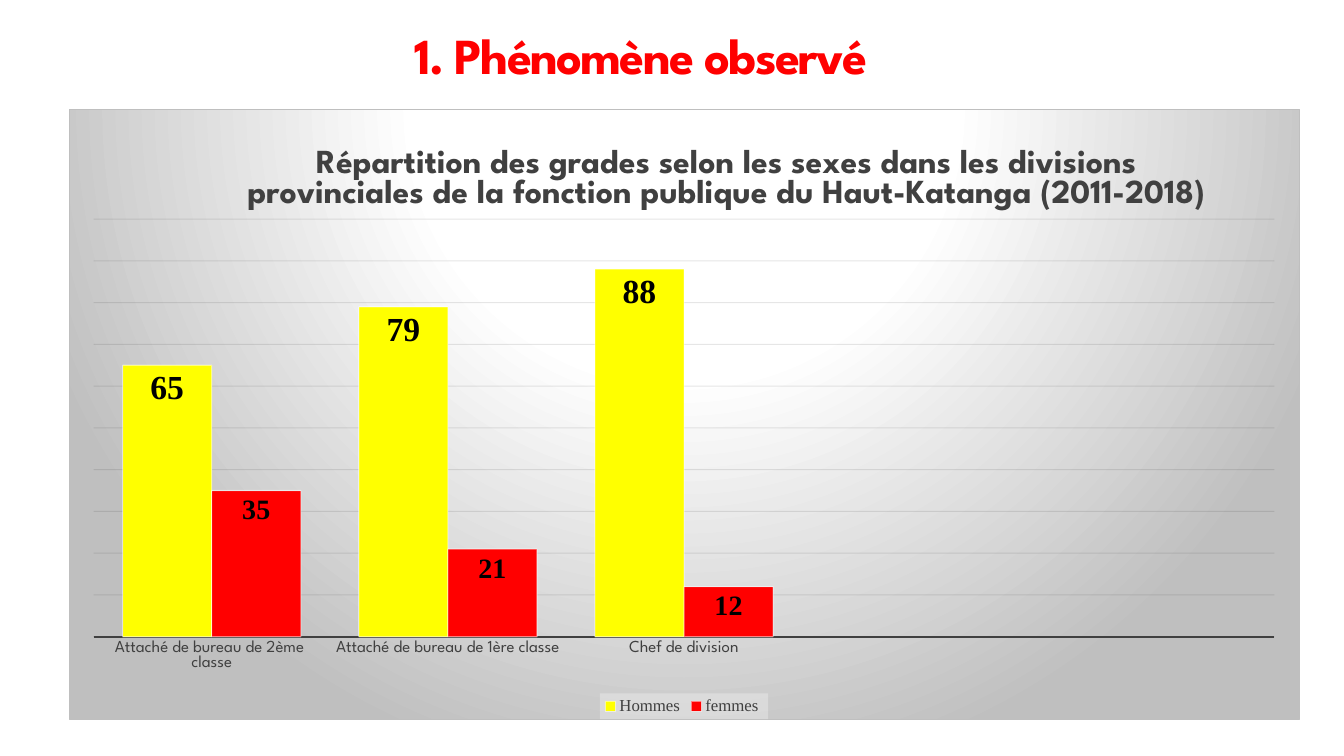
from lxml import etree
from pptx import Presentation
from pptx.chart.data import CategoryChartData
from pptx.dml.color import RGBColor
from pptx.enum.chart import XL_CHART_TYPE, XL_LABEL_POSITION, XL_LEGEND_POSITION, XL_TICK_MARK
from pptx.enum.text import MSO_ANCHOR, PP_ALIGN
from pptx.oxml import parse_xml
from pptx.oxml.ns import qn
from pptx.util import Inches, Pt

COLUMNS = XL_CHART_TYPE.COLUMN_CLUSTERED
INSIDE_END = XL_LABEL_POSITION.INSIDE_END
BOTTOM = XL_LEGEND_POSITION.BOTTOM
NO_TICK = XL_TICK_MARK.NONE
MIDDLE = MSO_ANCHOR.MIDDLE
CENTER = PP_ALIGN.CENTER

NAMESPACES = (
    'xmlns:c="http://schemas.openxmlformats.org/drawingml/2006/chart" '
    'xmlns:a="http://schemas.openxmlformats.org/drawingml/2006/main"'
)
CHART_BACKGROUND = f"""<c:spPr {NAMESPACES}>
  <a:gradFill rotWithShape="1">
    <a:gsLst>
      <a:gs pos="0"><a:srgbClr val="FFFFFF"/></a:gs>
      <a:gs pos="39000"><a:srgbClr val="FFFFFF"/></a:gs>
      <a:gs pos="100000"><a:srgbClr val="BFBFBF"/></a:gs>
    </a:gsLst>
    <a:path path="circle">
      <a:fillToRect l="50000" t="-80000" r="50000" b="180000"/>
    </a:path>
  </a:gradFill>
  <a:ln w="9525"><a:solidFill><a:srgbClr val="BFBFBF"/></a:solidFill></a:ln>
</c:spPr>"""
LEGEND_BACKGROUND = f"""<c:spPr {NAMESPACES}>
  <a:solidFill><a:srgbClr val="F2F2F2"><a:alpha val="39000"/></a:srgbClr></a:solidFill>
</c:spPr>"""

CATEGORIES = [
    "Attaché de bureau de 2ème  classe",
    "Attaché de bureau de 1ère classe",
    "Chef de division",
    "",
    "",
]
# name, values, colour, label size
SERIES = [
    ("Hommes", [65, 79, 88, None, None], "FFFF00", 24),
    ("femmes ", [35, 21, 12, None, None], "FF0000", 20),
]


def color(hex_string):
    return RGBColor.from_string(hex_string)


def set_font(font, name, size, hex_color, bold=False):
    font.name = name
    font.size = Pt(size)
    font.bold = bold
    font.color.rgb = color(hex_color)


def set_line(line, hex_color, width, opacity=100):
    line.width = Pt(width)
    line.color.rgb = color(hex_color)
    if opacity < 100:
        for fill_color in line._ln.iter(qn("a:srgbClr")):
            etree.SubElement(fill_color, qn("a:alpha")).set("val", str(opacity * 1000))


def make_layout(**settings):
    """Return a manual chart layout; settings are its elements in schema order."""
    items = "".join(f'<c:{key} val="{value}"/>' for key, value in settings.items())
    return parse_xml(
        f"<c:layout {NAMESPACES}><c:manualLayout>{items}</c:manualLayout></c:layout>"
    )


def place(element, index, layout):
    for old_layout in element.findall(qn("c:layout")):
        element.remove(old_layout)
    element.insert(index, layout)


class SlideBuilder:
    heading_font = "League Spartan"
    number_font = "Times New Roman"
    dark = "404040"

    def __init__(self, slide):
        self.slide = slide

    def add_text(self, text, box, size, hex_color, bold=False, line_spacing=1.0, tracking=0):
        shape = self.slide.shapes.add_textbox(*map(Inches, box))
        frame = shape.text_frame
        frame.word_wrap = True
        frame.vertical_anchor = MIDDLE
        paragraph = frame.paragraphs[0]
        paragraph.alignment = CENTER
        paragraph.line_spacing = line_spacing
        run = paragraph.add_run()
        run.text = text
        set_font(run.font, self.heading_font, size, hex_color, bold)
        run.font._element.set("spc", str(round(tracking * 100)))

    def add_column_chart(self, title, box):
        data = CategoryChartData()
        data.categories = CATEGORIES
        for name, values, _, _ in SERIES:
            data.add_series(name, values)
        chart = self.slide.shapes.add_chart(COLUMNS, *map(Inches, box), data).chart
        set_font(chart.font, "Calibri", 10, "000000")
        chart._chartSpace.chart.addnext(parse_xml(CHART_BACKGROUND))
        place(
            chart._chartSpace.chart.plotArea, 0,
            make_layout(layoutTarget="inner", xMode="edge", yMode="edge",
                        x=0.02, y=0.18, w=0.96, h=0.685),
        )
        self.style_title(chart, title)
        self.style_axes(chart)
        self.style_series(chart.plots[0])
        self.style_legend(chart)

    def style_title(self, chart, title):
        chart.has_title = True
        paragraph = chart.chart_title.text_frame.paragraphs[0]
        run = paragraph.add_run()
        run.text = title
        set_font(run.font, self.heading_font, 24, self.dark, bold=True)
        place(
            chart.chart_title._element, 1,
            make_layout(xMode="edge", yMode="edge", x=0.14, y=0.05),
        )

    def style_axes(self, chart):
        category_axis = chart.category_axis
        category_axis.major_tick_mark = NO_TICK
        set_font(category_axis.tick_labels.font, self.heading_font, 12, self.dark)
        set_line(category_axis.format.line, self.dark, 1.5)
        value_axis = chart.value_axis
        value_axis.minimum_scale = 0
        value_axis.maximum_scale = 100
        value_axis.major_unit = 10
        value_axis.visible = False
        set_line(value_axis.major_gridlines.format.line, "0D0D0D", 0.75, opacity=10)

    def style_series(self, plot):
        plot.gap_width = 65
        plot.overlap = 0
        plot.vary_by_categories = False
        for series, (_, _, fill_color, label_size) in zip(plot.series, SERIES):
            series.format.fill.solid()
            series.format.fill.fore_color.rgb = color(fill_color)
            set_line(series.format.line, "FFFFFF", 0.75, opacity=50)
            labels = series.data_labels
            labels.show_value = True
            labels.position = INSIDE_END
            set_font(labels.font, self.number_font, label_size, "000000", bold=True)

    def style_legend(self, chart):
        chart.has_legend = True
        legend = chart.legend
        legend.position = BOTTOM
        legend.include_in_layout = False
        set_font(legend.font, self.number_font, 12, self.dark)
        legend._element.find(qn("c:txPr")).addprevious(parse_xml(LEGEND_BACKGROUND))


def main():
    presentation = Presentation()
    presentation.slide_width = Inches(13.33)
    presentation.slide_height = Inches(7.5)
    builder = SlideBuilder(presentation.slides.add_slide(presentation.slide_layouts[6]))
    builder.add_text(
        "1. Phénomène observé", (1.94, 0.29, 8.84, 0.6),
        size=36, hex_color="FF0000", bold=True, line_spacing=0.85, tracking=-1.2,
    )
    builder.add_column_chart(
        "Répartition des grades selon les sexes dans les divisions "
        "provinciales de la fonction publique du Haut-Katanga (2011-2018)",
        (0.68, 1.08, 12.21, 6.06),
    )
    presentation.save("out.pptx")


if __name__ == "__main__":
    main()
